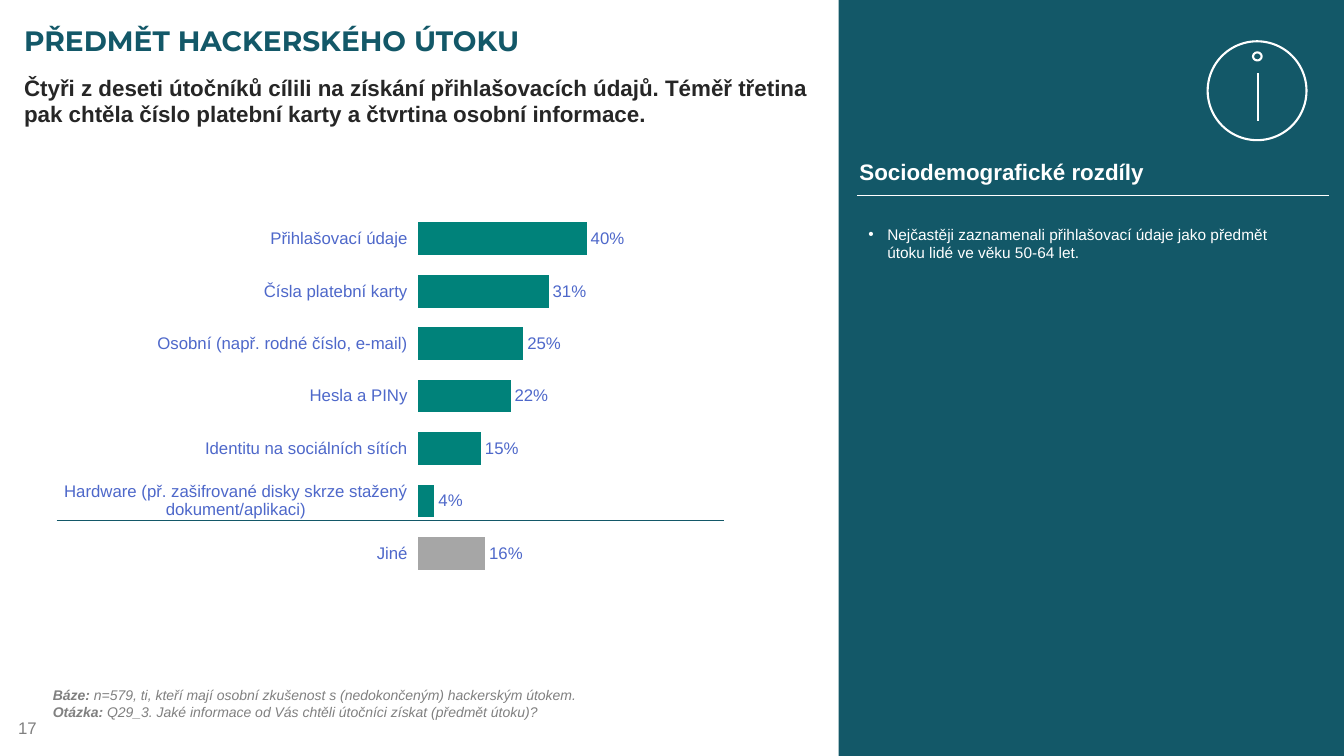
from lxml.etree import SubElement
from pptx import Presentation
from pptx.chart.data import CategoryChartData
from pptx.dml.color import RGBColor
from pptx.enum.chart import XL_CHART_TYPE, XL_LABEL_POSITION, XL_TICK_LABEL_POSITION, XL_TICK_MARK
from pptx.enum.shapes import MSO_CONNECTOR, MSO_SHAPE
from pptx.enum.text import MSO_ANCHOR, MSO_AUTO_SIZE, PP_ALIGN
from pptx.oxml import parse_xml
from pptx.oxml.ns import nsdecls, qn
from pptx.util import Pt

PETROL, TEAL, BLUE = "135868", "00827A", "4E68CA"
GREY, LIGHT_GREY, DARK, WHITE = "808080", "A6A6A6", "262626", "FFFFFF"


def color(hex_string):
    return RGBColor.from_string(hex_string)


def style(font, size, hex_string, bold=False, italic=False, name="Arial"):
    font.name, font.size = name, Pt(size)
    font.bold, font.italic = bold, italic
    font.color.rgb = color(hex_string)


presentation = Presentation()
presentation.slide_width, presentation.slide_height = Pt(960), Pt(540)
slide = presentation.slides.add_slide(presentation.slide_layouts[1])
shapes = slide.shapes

# Title and key message
title, message = slide.placeholders
title.left, title.top, title.width, title.height = Pt(10), Pt(10), Pt(950), Pt(38)
message.left, message.top, message.width, message.height = Pt(10), Pt(49), Pt(589), Pt(50)
title.text_frame.text = "PŘEDMĚT HACKERSKÉHO ÚTOKU"
message.text_frame.text = (
    "Čtyři z deseti útočníků cílili na získání přihlašovacích údajů. "
    "Téměř třetina pak chtěla číslo platební karty a čtvrtina osobní informace."
)
for placeholder, anchor, size, hex_string, font_name in (
    (title, MSO_ANCHOR.MIDDLE, 20, PETROL, "Montserrat"),
    (message, MSO_ANCHOR.TOP, 16, DARK, "Arial"),
):
    frame = placeholder.text_frame
    frame.auto_size = MSO_AUTO_SIZE.NONE
    frame.vertical_anchor = anchor
    paragraph = frame.paragraphs[0]
    paragraph.alignment = PP_ALIGN.LEFT
    paragraph.space_before = Pt(0)
    style(paragraph.runs[0].font, size, hex_string, bold=True, name=font_name)
properties = message.text_frame.paragraphs[0]._p.get_or_add_pPr()
properties.set("marL", "0")
properties.set("indent", "0")
SubElement(properties, qn("a:buNone"))

# Bar chart
targets = {
    "Přihlašovací údaje": 40,
    "Čísla platební karty": 31,
    "Osobní (např. rodné číslo, e-mail)": 25,
    "Hesla a PINy": 22,
    "Identitu na sociálních sítích": 15,
    "Hardware (př. zašifrované disky skrze stažený dokument/aplikaci)": 4,
    "Jiné": 16,
}
chart_data = CategoryChartData()
chart_data.categories = list(targets)
chart_data.add_series("Series 1", list(targets.values()))
chart = shapes.add_chart(
    XL_CHART_TYPE.BAR_CLUSTERED, Pt(43.9), Pt(125.3), Pt(556.6), Pt(289.4), chart_data
).chart
chart.has_legend = False
chart.has_title = False
style(chart.font, 10, BLUE)

category_axis = chart.category_axis
category_axis.reverse_order = True
category_axis.major_tick_mark = XL_TICK_MARK.NONE
category_axis.tick_label_position = XL_TICK_LABEL_POSITION.LOW
category_axis.format.line.fill.background()
style(category_axis.tick_labels.font, 12, BLUE)
value_axis = chart.value_axis
value_axis.minimum_scale, value_axis.maximum_scale = 0, 100
value_axis.has_major_gridlines = False
value_axis.visible = False

plot = chart.plots[0]
plot.gap_width = 60
plot.vary_by_categories = False
bars = plot.series[0]
other_bar = bars.points[len(targets) - 1]
for bar, hex_string in ((bars, TEAL), (other_bar, LIGHT_GREY)):
    bar.format.fill.solid()
    bar.format.fill.fore_color.rgb = color(hex_string)
labels = bars.data_labels
labels.show_value = True
labels.position = XL_LABEL_POSITION.OUTSIDE_END
labels.number_format = '#,##0"%";\\-#,##0'
labels.number_format_is_linked = False
style(labels.font, 12, BLUE)

plot_area = chart._chartSpace.chart.plotArea
for old_layout in plot_area.findall(qn("c:layout")):
    plot_area.remove(old_layout)
plot_area.insert(0, parse_xml(
    f'<c:layout {nsdecls("c")}><c:manualLayout><c:layoutTarget val="inner"/>'
    '<c:xMode val="edge"/><c:yMode val="edge"/><c:x val="0.457"/><c:y val="0.092"/>'
    '<c:w val="0.543"/><c:h val="0.906"/></c:manualLayout></c:layout>'
))

# Side panel and information icon
for kind, left, top, width, height, fill in (
    (MSO_SHAPE.RECTANGLE, 599, 0, 361, 540, PETROL),
    (MSO_SHAPE.OVAL, 862.6, 29.5, 70.6, 70.6, None),
    (MSO_SHAPE.OVAL, 895, 37.4, 6.2, 5.8, None),
):
    shape = shapes.add_shape(kind, Pt(left), Pt(top), Pt(width), Pt(height))
    shape.shadow.inherit = False
    if fill:
        shape.fill.solid()
        shape.fill.fore_color.rgb = color(fill)
        shape.line.fill.background()
    else:
        shape.fill.background()
        shape.line.color.rgb = color(WHITE)
        shape.line.width = Pt(1.5)

# Separator above "Jiné", heading rule and icon stem
for x1, y1, x2, y2, hex_string, width in (
    (40.5, 372, 517, 372, PETROL, 0.5),
    (612, 139.5, 949.5, 139.5, WHITE, 0.5),
    (898.3, 52.3, 898.3, 86.5, WHITE, 1.5),
):
    line = shapes.add_connector(MSO_CONNECTOR.STRAIGHT, Pt(x1), Pt(y1), Pt(x2), Pt(y2))
    line.line.color.rgb = color(hex_string)
    line.line.width = Pt(width)
    SubElement(line._element.spPr, qn("a:effectLst"))

# Text boxes: each paragraph is a list of (text, bold) runs
text_boxes = {}
for name, left, top, width, height, margin, size, hex_string, italic, paragraphs in (
    ("number", 3.6, 505.4, 224, 29, 9.4, 12, GREY, False, [[("17", False)]]),
    ("source", 37.8, 490.3, 834, 24.5, 0, 10, GREY, True, [
        [("Báze: ", True),
         ("n=579, ti, kteří mají osobní zkušenost s (nedokončeným) hackerským útokem.", False)],
        [("Otázka:", True),
         (" Q29_3. Jaké informace od Vás chtěli útočníci získat (předmět útoku)?", False)],
    ]),
    ("heading", 606.8, 109.6, 220, 26.6, 7.2, 16, WHITE, False,
     [[("Sociodemografické rozdíly", True)]]),
    ("finding", 613.2, 157, 300, 47.5, 7.2, 11, WHITE, False,
     [[("Nejčastěji zaznamenali přihlašovací údaje jako předmět útoku lidé ve věku 50-64 let.",
        False)]]),
):
    box = shapes.add_textbox(Pt(left), Pt(top), Pt(width), Pt(height))
    frame = box.text_frame
    frame.word_wrap = name != "heading"
    frame.margin_left = frame.margin_right = Pt(margin)
    frame.margin_top = frame.margin_bottom = Pt(margin / 2)
    for index, runs in enumerate(paragraphs):
        paragraph = frame.add_paragraph() if index else frame.paragraphs[0]
        for text, bold in runs:
            run = paragraph.add_run()
            run.text = text
            style(run.font, size, hex_string, bold, italic)
    text_boxes[name] = frame

text_boxes["number"].vertical_anchor = MSO_ANCHOR.MIDDLE
properties = text_boxes["finding"].paragraphs[0]._p.get_or_add_pPr()
properties.set("marL", str(Pt(13.5)))
properties.set("indent", str(-Pt(13.5)))
SubElement(properties, qn("a:buFont"), typeface="Arial")
SubElement(properties, qn("a:buChar"), char="•")

presentation.save("out.pptx")
